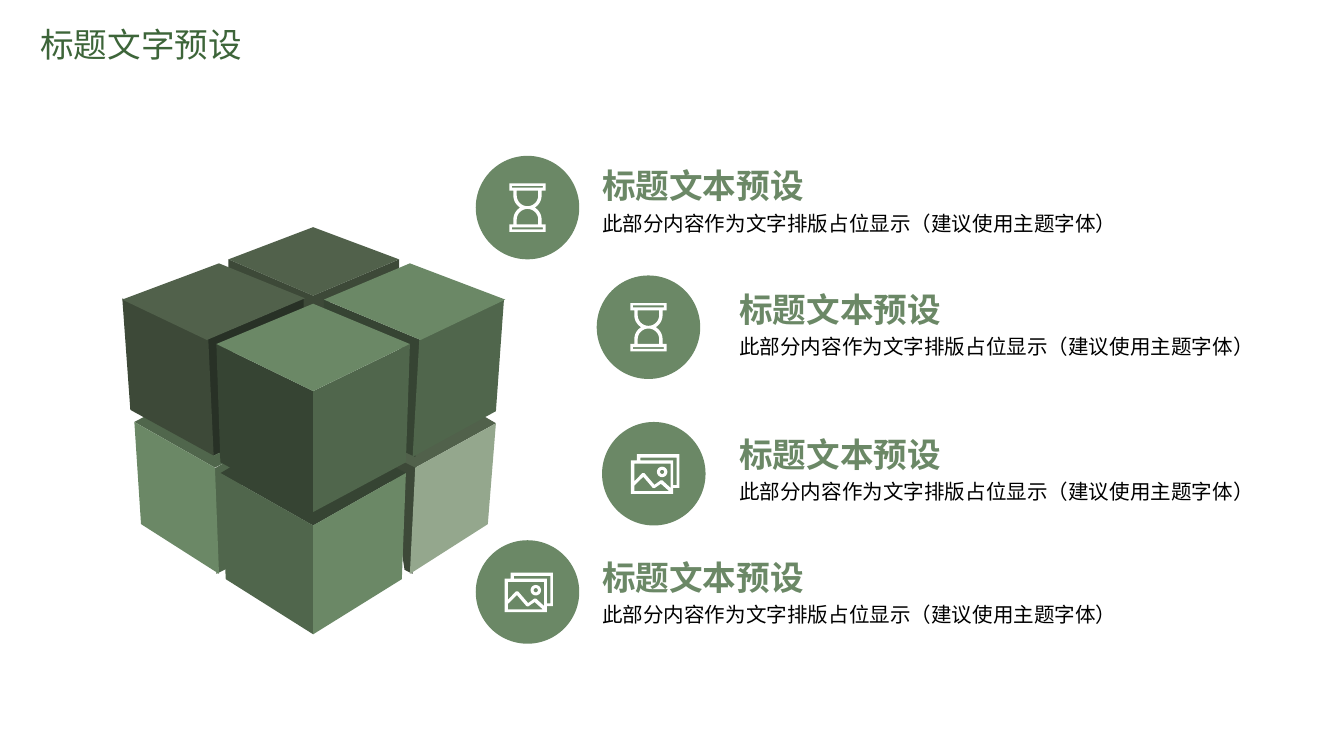
from math import cos, radians, sin

from pptx import Presentation
from pptx.dml.color import RGBColor
from pptx.enum.shapes import MSO_SHAPE
from pptx.enum.text import MSO_ANCHOR, PP_ALIGN
from pptx.oxml.ns import qn
from pptx.util import Pt
from lxml.etree import SubElement

COLORS = {
    "title": "3D6539", "accent": "6B8866", "pale": "94A78D", "mid": "50664C",
    "olive": "51614B", "dark": "3D4938", "deep": "364433", "shadow": "283126",
    "white": "FFFFFF", "black": "000000",
}
EAST_ASIAN_FONT = "Noto Sans CJK SC"
HEADING = "标题文本预设"
DETAIL = "此部分内容作为文字排版占位显示（建议使用主题字体）"

# Drawing grid: one step is 0.72 points, a hundredth of an inch.
STEP = 0.72
CIRCLE = 77

# Cube faces from back to front, corners in grid steps.
FACES = [
    ("dark", [(170, 193), (170, 203), (214, 222), (216, 236), (233, 228), (233, 220)]),
    ("mid", [(161, 427), (183, 416), (178, 338), (159, 349)]),
    ("shadow", [(157, 340), (172, 333), (170, 264), (226, 232), (226, 222), (153, 253)]),
    ("dark", [(310, 348), (288, 337), (278, 340), (281, 354), (291, 359), (301, 424), (307, 427)]),
    ("dark", [(233, 220), (297, 193), (297, 200), (245, 222), (246, 234), (233, 231)]),
    ("deep", [(164, 352), (181, 342), (293, 347), (302, 352), (233, 391)]),
    ("olive", [(369, 315), (345, 301), (294, 321), (301, 344), (309, 348)]),
    ("mid", [(100, 314), (123, 302), (159, 339), (168, 335), (168, 344), (160, 348)]),
    ("accent", [(105, 390), (163, 427), (160, 348), (100, 314)]),
    ("dark", [(97, 305), (159, 339), (155, 252), (91, 222)]),
    ("deep", [(241, 223), (241, 233), (298, 258), (298, 335), (309, 340), (313, 253)]),
    ("deep", [(161, 256), (164, 344), (233, 381), (233, 291)]),
    ("mid", [(233, 472), (233, 391), (164, 352), (168, 431)]),
    ("accent", [(233, 391), (302, 352), (299, 431), (233, 472)]),
    ("mid", [(233, 291), (305, 256), (302, 344), (233, 381)]),
    ("mid", [(312, 253), (307, 340), (369, 306), (375, 223)]),
    ("pale", [(305, 427), (309, 348), (369, 315), (363, 390)]),
    ("accent", [(161, 256), (233, 226), (305, 256), (233, 291)]),
    ("olive", [(91, 223), (163, 196), (227, 222), (154, 253)]),
    ("accent", [(313, 253), (241, 223), (305, 196), (376, 223)]),
    ("olive", [(233, 169), (297, 193), (233, 220), (170, 193)]),
]


def grid(steps):
    return Pt(steps * STEP)


def rgb(name):
    return RGBColor.from_string(COLORS[name])


def arc(center_x, center_y, radius, start, end, pieces=16):
    """Points along an arc, angles in degrees running clockwise from the right."""
    angles = [radians(start + (end - start) * i / pieces) for i in range(pieces + 1)]
    return [(center_x + radius * cos(a), center_y + radius * sin(a)) for a in angles]


def turned(points):
    """The points rotated half a turn about the origin."""
    return [(-x, -y) for x, y in points]


def hourglass():
    half = [(10.5, -12.5), (13.5, -12.5), (13.5, -18),
            (-13.5, -18), (-13.5, -12.5), (-10.5, -12.5)]
    half += arc(0, -9, 10.5, 180, 120) + arc(0, 9, 10.5, 240, 180)
    slot = [(-11.5, -16.2), (11.5, -16.2), (11.5, -14.8), (-11.5, -14.8)]
    bulb = [(-8, -12.5), (8, -12.5)] + arc(0, -9, 8, 0, 180)
    return [[half + turned(half), slot, turned(slot), bulb, turned(bulb)]]


def photos():
    outline = [(-12.5, -14.5), (19, -14.5), (19, 10.5), (14.5, 10.5),
               (14.5, 15), (-17, 15), (-17, -10), (-12.5, -10)]
    sky = [(12.5, -7.5), (12.5, 10.5), (6.5, 5), (5, 5), (0.5, 8.3),
           (-7, -0.5), (-8.5, -0.5), (-14.5, 5.8), (-14.5, -7.5)]
    ground = [(-14.5, 8.8), (-7.8, 2.3), (-0.8, 10.5), (0.5, 10.8),
              (5.3, 7.5), (11.5, 13), (-14.5, 13)]
    back = [(17, 8.5), (14.5, 8.5), (14.5, -10), (-10, -10), (-10, -12), (17, -12)]
    sun = [arc(6.2, -1.3, radius, 0, 360) for radius in (3.9, 1.6)]
    return [[outline, sky, ground, back], sun]


def paint(shape, color):
    shape.shadow.inherit = False
    shape.fill.solid()
    shape.fill.fore_color.rgb = rgb(color)
    shape.line.fill.background()


def add_outline(shapes, contours, color, origin=(0, 0)):
    """Add one filled freeform; contours inside the first one become holes."""
    placed = [[(grid(origin[0] + x), grid(origin[1] + y)) for x, y in contour]
              for contour in contours]
    builder = shapes.build_freeform(*placed[0][0])
    for index, contour in enumerate(placed):
        if index:
            builder.move_to(*contour[0])
        builder.add_line_segments(contour[1:], close=True)
    paint(builder.convert_to_shape(), color)


def add_badge(page, left, top, icon):
    shapes = page.shapes.add_group_shape().shapes
    circle = shapes.add_shape(MSO_SHAPE.OVAL, grid(left), grid(top), grid(CIRCLE), grid(CIRCLE))
    paint(circle, "accent")
    center = (left + CIRCLE / 2, top + CIRCLE / 2)
    for contours in icon:
        add_outline(shapes, contours, "white", center)


def write(box, text, color, name, size, bold=False, spacing=None):
    para = box.text_frame.paragraphs[0]
    para.alignment = PP_ALIGN.LEFT
    para.line_spacing = spacing
    span = para.add_run()
    span.text = text
    for key, value in {"name": name, "size": Pt(size), "bold": bold}.items():
        setattr(span.font, key, value)
    span.font.color.rgb = rgb(color)
    east_asian = SubElement(span.font._element, qn("a:ea"))
    east_asian.set("typeface", EAST_ASIAN_FONT)


def add_text(shapes, left, top, height, anchor, **text_format):
    box = shapes.add_textbox(grid(left), grid(top), grid(391), grid(height))
    frame_format = {"word_wrap": True, "vertical_anchor": anchor, "margin_left": 0,
                    "margin_right": 0, "margin_top": 0, "margin_bottom": 0}
    for key, value in frame_format.items():
        setattr(box.text_frame, key, value)
    write(box, name="Calibri", **text_format)


def add_caption(page, left, top):
    shapes = page.shapes.add_group_shape().shapes
    add_text(shapes, left, top, 32, MSO_ANCHOR.BOTTOM,
             text=HEADING, color="accent", size=18, bold=True)
    add_text(shapes, left, top + 32, 72, MSO_ANCHOR.TOP,
             text=DETAIL, color="black", size=11, spacing=1.2)


def set_title(page, text):
    title = page.shapes.title
    place = {"left": grid(20), "top": grid(13), "width": grid(234), "height": grid(40)}
    for key, value in place.items():
        setattr(title, key, value)
    title.text_frame.vertical_anchor = MSO_ANCHOR.TOP
    write(title, text, "title", EAST_ASIAN_FONT, 18)


def main():
    deck = Presentation()
    deck.slide_width, deck.slide_height = Pt(720), Pt(405)
    page = deck.slides.add_slide(deck.slide_layouts[5])
    set_title(page, "标题文字预设")
    cube = page.shapes.add_group_shape()
    for color, corners in FACES:
        add_outline(cube.shapes, [corners], color)
    items = [
        ((354, 116), hourglass(), (448, 121)),
        ((444, 205), hourglass(), (550, 213)),
        ((448, 314), photos(), (550, 321)),
        ((354, 402), photos(), (448, 412)),
    ]
    for badge, icon, caption in items:
        add_badge(page, *badge, icon)
        add_caption(page, *caption)
    deck.save("out.pptx")


if __name__ == "__main__":
    main()
